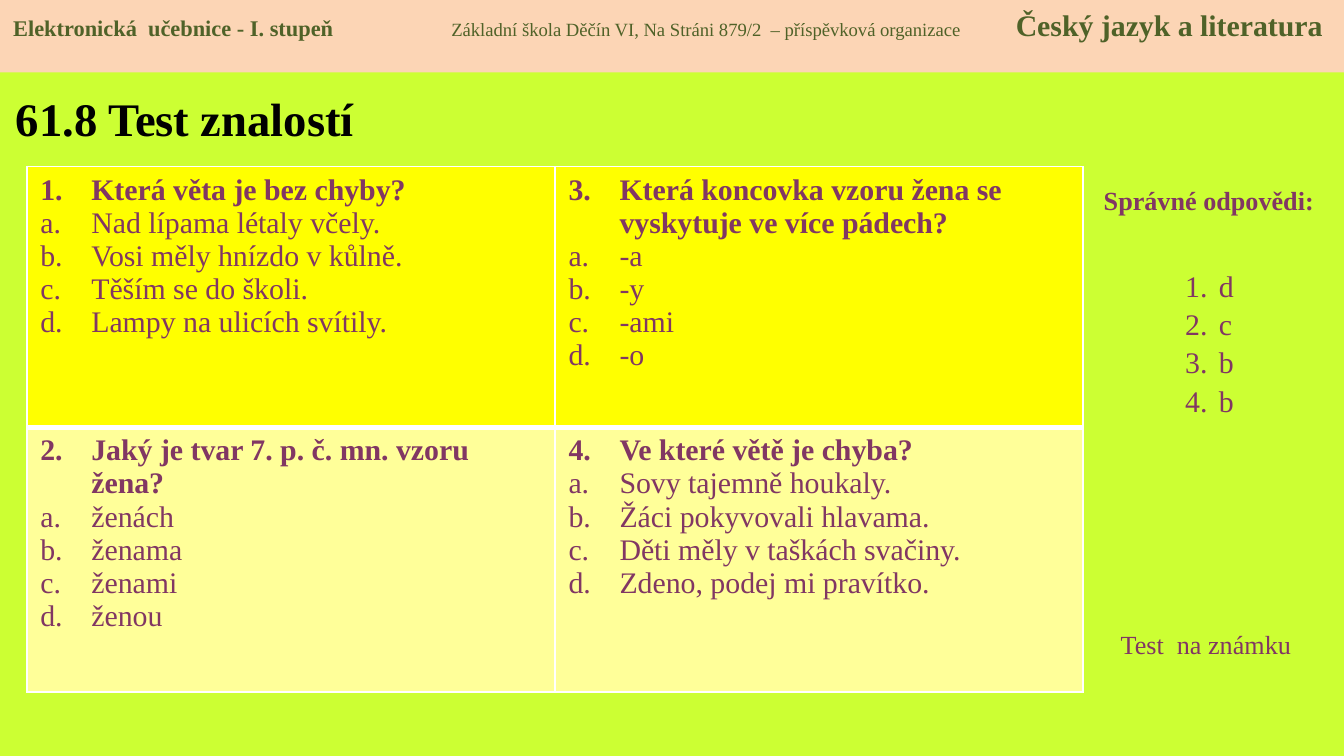
from dataclasses import dataclass

from lxml import etree
from pptx import Presentation
from pptx.dml.color import RGBColor
from pptx.enum.shapes import MSO_SHAPE
from pptx.enum.text import MSO_ANCHOR, PP_ALIGN
from pptx.oxml.ns import qn
from pptx.util import Inches, Pt

RECTANGLE = MSO_SHAPE.RECTANGLE
TOP, MIDDLE = MSO_ANCHOR.TOP, MSO_ANCHOR.MIDDLE
LEFT, CENTER = PP_ALIGN.LEFT, PP_ALIGN.CENTER

LIME = RGBColor(0xCC, 0xFF, 0x33)
PEACH = RGBColor(0xFC, 0xD5, 0xB5)
YELLOW = RGBColor(0xFF, 0xFF, 0x00)
PALE_YELLOW = RGBColor(0xFF, 0xFF, 0x99)
WHITE = RGBColor(0xFF, 0xFF, 0xFF)
BLACK = RGBColor(0x00, 0x00, 0x00)
PLUM = RGBColor(0x81, 0x37, 0x63)
OLIVE = RGBColor(0x4F, 0x62, 0x28)

FONT_NAME = "Times New Roman"
GRID_UNIT = Inches(0.1)
SLIDE_COLUMNS, SLIDE_ROWS = 100, 56.25
TABLE_INDENT, ANSWER_INDENT = 3.8, 2.5
HEADER_TABS = (32.6, 74.6)
THIN, THICK = 1, 3


@dataclass(frozen=True)
class Box:
    left: float
    top: float
    width: float
    height: float

    def lengths(self) -> tuple:
        return tuple(grid(value) for value in (self.left, self.top, self.width, self.height))


@dataclass(frozen=True)
class Style:
    size: int
    color: RGBColor
    bold: bool = False


@dataclass(frozen=True)
class Label:
    text: str
    box: Box
    style: Style
    alignment: int = LEFT
    anchor: int = TOP


@dataclass(frozen=True)
class Question:
    number: int
    row: int
    column: int
    text: str
    options: tuple


QUESTION_STYLE = Style(16, PLUM, True)
OPTION_STYLE = Style(16, PLUM)

LABELS = (
    Label("61.8 Test znalostí", Box(0.2, 5.5, 31.9, 6.5), Style(25, BLACK, True), anchor=MIDDLE),
    Label("Správné odpovědi:", Box(80.5, 13.2, 18.9, 3.4), Style(14, PLUM, True), CENTER),
    Label("Test  na známku", Box(82.4, 46.3, 15.7, 3.4), Style(14, PLUM)),
)
HEADER_PARTS = (
    ("Elektronická  učebnice - I. stupeň", Style(12, OLIVE, True)),
    ("\tZákladní škola Děčín VI, Na Stráni 879/2  – příspěvková organizace", Style(10, OLIVE)),
    ("\tČeský jazyk a literatura", Style(16, OLIVE, True)),
)
HEADER_BOX = Box(0, 0, SLIDE_COLUMNS, 5.4)
TABLE_BOX = Box(2, 12.4, 78.6, 39.1)
TABLE_ROWS = (19.4, 19.7)
ROW_FILLS = (YELLOW, PALE_YELLOW)
ANSWER_BOX = Box(87.2, 16.5, 5.5, 19.9)
ANSWERS = ("d", "c", "b", "b")
QUESTIONS = (
    Question(1, 0, 0, "Která věta je bez chyby?",
             ("Nad lípama létaly včely.", "Vosi měly hnízdo v kůlně.",
              "Těším se do školi.", "Lampy na ulicích svítily.")),
    Question(2, 1, 0, "Jaký je tvar 7. p. č. mn. vzoru žena?",
             ("ženách", "ženama", "ženami", "ženou")),
    Question(3, 0, 1, "Která koncovka vzoru žena se vyskytuje ve více pádech?",
             ("-a", "-y", "-ami", "-o")),
    Question(4, 1, 1, "Ve které větě je chyba?",
             ("Sovy tajemně houkaly.", "Žáci pokyvovali hlavama.",
              "Děti měly v taškách svačiny.", "Zdeno, podej mi pravítko.")),
)


def grid(units: float) -> int:
    return round(units * GRID_UNIT)


def add_run(paragraph, text: str, style: Style) -> None:
    run = paragraph.add_run()
    run.text = text
    run.font.color.rgb = style.color
    values = {"name": FONT_NAME, "size": Pt(style.size), "bold": style.bold}
    for name, value in values.items():
        setattr(run.font, name, value)


def set_numbering(paragraph, scheme: str, indent: float, start: int = 1) -> None:
    properties = paragraph._p.get_or_add_pPr()
    properties.set("marL", str(grid(indent)))
    properties.set("indent", str(-grid(indent)))
    bullet = etree.SubElement(properties, qn("a:buAutoNum"), type=scheme)
    if start > 1:
        bullet.set("startAt", str(start))


def add_label(slide, label: Label) -> None:
    frame = slide.shapes.add_textbox(*label.box.lengths()).text_frame
    frame.word_wrap = True
    frame.vertical_anchor = label.anchor
    frame.paragraphs[0].alignment = label.alignment
    add_run(frame.paragraphs[0], label.text, label.style)


def add_header(slide) -> None:
    header = slide.shapes.add_shape(RECTANGLE, *HEADER_BOX.lengths())
    header.shadow.inherit = False
    header.fill.solid()
    header.fill.fore_color.rgb = PEACH
    header.line.fill.background()
    frame = header.text_frame
    frame.word_wrap = True
    frame.vertical_anchor = TOP
    paragraph = frame.paragraphs[0]
    paragraph.alignment = LEFT
    tabs = etree.SubElement(paragraph._p.get_or_add_pPr(), qn("a:tabLst"))
    for position in HEADER_TABS:
        etree.SubElement(tabs, qn("a:tab"), pos=str(grid(position)), algn="l")
    for text, style in HEADER_PARTS:
        add_run(paragraph, text, style)


def set_borders(cell, row: int) -> None:
    properties = cell._tc.get_or_add_tcPr()
    widths = {"L": THIN, "R": THIN, "T": THICK if row else THIN, "B": THIN if row else THICK}
    for side, width in widths.items():
        line = etree.SubElement(properties, qn(f"a:ln{side}"), w=str(Pt(width)))
        fill = etree.SubElement(line, qn("a:solidFill"))
        etree.SubElement(fill, qn("a:srgbClr"), val=str(WHITE))


def fill_cell(cell, question: Question) -> None:
    set_borders(cell, question.row)
    cell.fill.solid()
    cell.fill.fore_color.rgb = ROW_FILLS[question.row]
    frame = cell.text_frame
    paragraph = frame.paragraphs[0]
    set_numbering(paragraph, "arabicPeriod", TABLE_INDENT, question.number)
    add_run(paragraph, question.text, QUESTION_STYLE)
    for option in question.options:
        paragraph = frame.add_paragraph()
        set_numbering(paragraph, "alphaLcPeriod", TABLE_INDENT)
        add_run(paragraph, option, OPTION_STYLE)


def add_questions(slide) -> None:
    table = slide.shapes.add_table(2, 2, *TABLE_BOX.lengths()).table
    table.first_row = False
    table.horz_banding = False
    for row, height in zip(table.rows, TABLE_ROWS):
        row.height = grid(height)
    for question in QUESTIONS:
        fill_cell(table.cell(question.row, question.column), question)


def add_answers(slide) -> None:
    frame = slide.shapes.add_textbox(*ANSWER_BOX.lengths()).text_frame
    values = {"word_wrap": True, "margin_top": grid(3.2), "margin_right": 0}
    for name, value in values.items():
        setattr(frame, name, value)
    for index, answer in enumerate(ANSWERS):
        paragraph = frame.add_paragraph() if index else frame.paragraphs[0]
        paragraph.line_spacing = 1.07
        set_numbering(paragraph, "arabicPeriod", ANSWER_INDENT)
        add_run(paragraph, answer, OPTION_STYLE)


def main() -> None:
    presentation = Presentation()
    presentation.slide_width = grid(SLIDE_COLUMNS)
    presentation.slide_height = grid(SLIDE_ROWS)
    slide = presentation.slides.add_slide(presentation.slide_layouts[6])
    slide.background.fill.solid()
    slide.background.fill.fore_color.rgb = LIME
    add_header(slide)
    for label in LABELS:
        add_label(slide, label)
    add_questions(slide)
    add_answers(slide)
    presentation.save("out.pptx")


if __name__ == "__main__":
    main()
